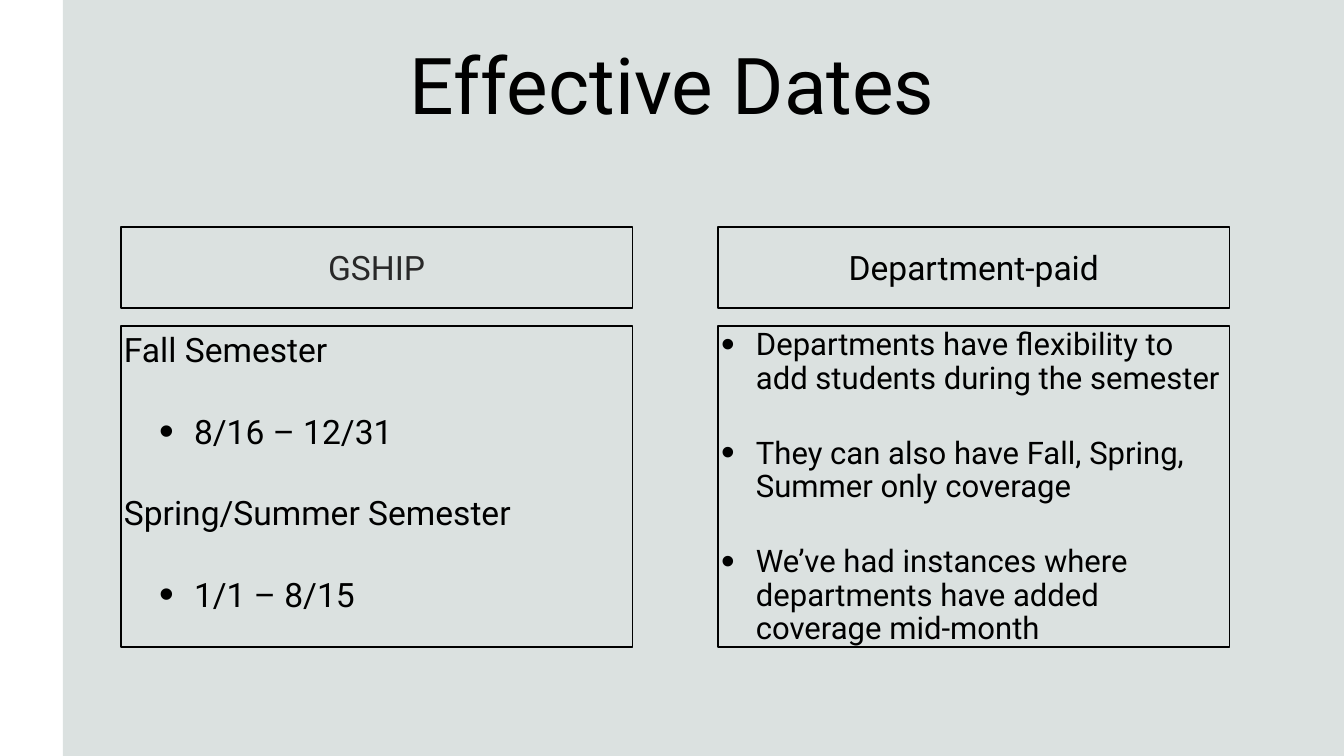
from lxml.etree import SubElement
from pptx import Presentation
from pptx.dml.color import RGBColor
from pptx.enum.shapes import MSO_SHAPE
from pptx.enum.text import MSO_ANCHOR, MSO_AUTO_SIZE, PP_ALIGN
from pptx.oxml.ns import qn
from pptx.util import Inches, Pt

# Content: each line is (text, indent in inches or None for no bullet)
TITLE = "Effective Dates"
COLUMNS = [
    {
        "heading": "GSHIP", "heading_color": "charcoal",
        "size": 48, "spacing": 1.0,
        "lines": [
            ("Fall Semester", None),
            ("8/16 – 12/31", 1.39),
            ("Spring/Summer Semester", None),
            ("1/1 – 8/15", 1.39),
        ],
    },
    {
        "heading": "Department-paid", "heading_color": "black",
        "size": 44.4, "spacing": 0.9,
        "lines": [
            ("Departments have flexibility to add students during the semester", 0.69),
            ("They can also have Fall, Spring, Summer only coverage", 0.69),
            ("We’ve had instances where departments have added coverage mid-month", 0.69),
        ],
    },
]

COLORS = {"panel": "DBE1E0", "black": "000000", "charcoal": "282828"}
FONT = "Roboto"
SLIDE_WIDTH, SLIDE_HEIGHT = 26.67, 15
PANEL_LEFT = 1.25
COLUMN_LEFT, COLUMN_STEP, COLUMN_WIDTH = 2.4, 11.85, 10.15
HEADING_TOP, HEADING_HEIGHT = 4.5, 1.61
LIST_TOP, LIST_HEIGHT = 6.47, 6.37
INSET, HANGING = 0.06, 0.69


def color(name):
    return RGBColor.from_string(COLORS[name])


def place(box, left, top, width, height, anchor, outlined=True):
    box.left, box.top = Inches(left), Inches(top)
    box.width, box.height = Inches(width), Inches(height)
    frame = box.text_frame
    frame.word_wrap = True
    frame.auto_size = MSO_AUTO_SIZE.NONE
    frame.vertical_anchor = anchor
    frame.margin_left = frame.margin_right = Inches(INSET)
    frame.margin_top = frame.margin_bottom = Inches(INSET)
    if outlined:
        box.line.color.rgb = color("black")
        box.line.width = Pt(2.25)
    return frame


def set_bullet(para, indent):
    props = para._p.get_or_add_pPr()
    props.set("marL", str(Inches(indent or 0)))
    props.set("indent", str(Inches(-HANGING if indent else 0)))
    if indent:
        SubElement(props, qn("a:buSzPct"), val="125000")
        SubElement(props, qn("a:buFont"), typeface="Arial")
        SubElement(props, qn("a:buChar"), char="•")
    else:
        SubElement(props, qn("a:buNone"))


def style(para, size, color_name="black", align=PP_ALIGN.LEFT, before=0, spacing=1.0):
    para.alignment = align
    para.space_before = Pt(before)
    para.line_spacing = spacing
    font = para.font
    font.name, font.size, font.bold = FONT, Pt(size), False
    font.color.rgb = color(color_name)


deck = Presentation()
deck.slide_width, deck.slide_height = Inches(SLIDE_WIDTH), Inches(SLIDE_HEIGHT)
page = deck.slides.add_slide(deck.slide_layouts.get_by_name("Comparison"))
title, *column_boxes = [box for box in page.placeholders
                        if box.placeholder_format.idx < 5]

# Background panel, behind everything
panel = page.shapes.add_shape(MSO_SHAPE.RECTANGLE, Inches(PANEL_LEFT), 0,
                              Inches(SLIDE_WIDTH - PANEL_LEFT), Inches(SLIDE_HEIGHT))
panel.shadow.inherit = False
panel.fill.solid()
panel.fill.fore_color.rgb = color("panel")
panel.line.fill.background()
page.shapes._spTree.insert(2, panel._element)

# Title
frame = place(title, 1.85, 0.39, 22.97, 2.5, MSO_ANCHOR.MIDDLE, outlined=False)
frame.text = TITLE
style(frame.paragraphs[0], 112, align=PP_ALIGN.CENTER)

# Two columns, each a heading box above a list box
for number, column in enumerate(COLUMNS):
    heading_box, list_box = column_boxes[2 * number:2 * number + 2]
    left = COLUMN_LEFT + number * COLUMN_STEP

    frame = place(heading_box, left, HEADING_TOP, COLUMN_WIDTH, HEADING_HEIGHT,
                  MSO_ANCHOR.MIDDLE)
    frame.text = column["heading"]
    style(frame.paragraphs[0], 48, column["heading_color"], PP_ALIGN.CENTER)

    frame = place(list_box, left, LIST_TOP, COLUMN_WIDTH, LIST_HEIGHT, MSO_ANCHOR.TOP)
    frame.text = "\n".join(text for text, _ in column["lines"])
    for row, (para, (_, indent)) in enumerate(zip(frame.paragraphs, column["lines"])):
        para.level = 1 if indent and indent > HANGING else 0
        set_bullet(para, indent)
        style(para, column["size"], before=59 if row else 0, spacing=column["spacing"])

deck.save("out.pptx")
